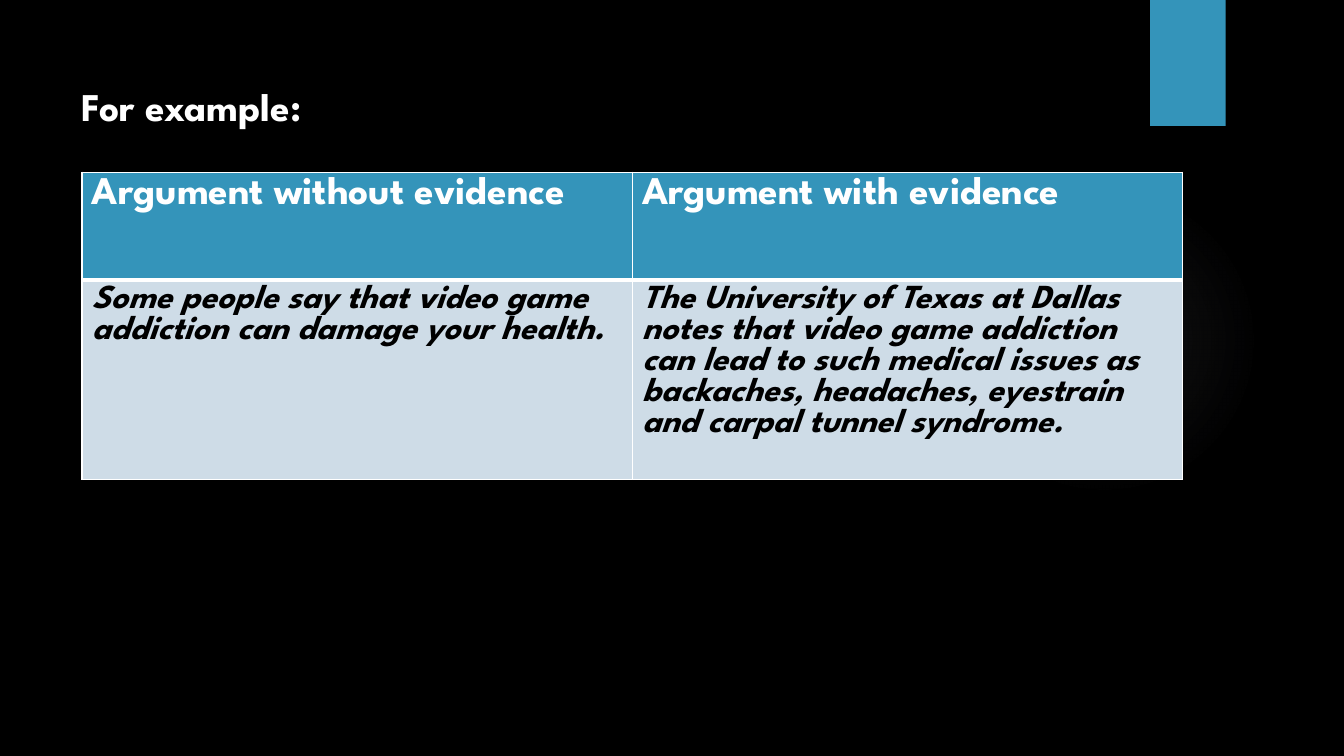
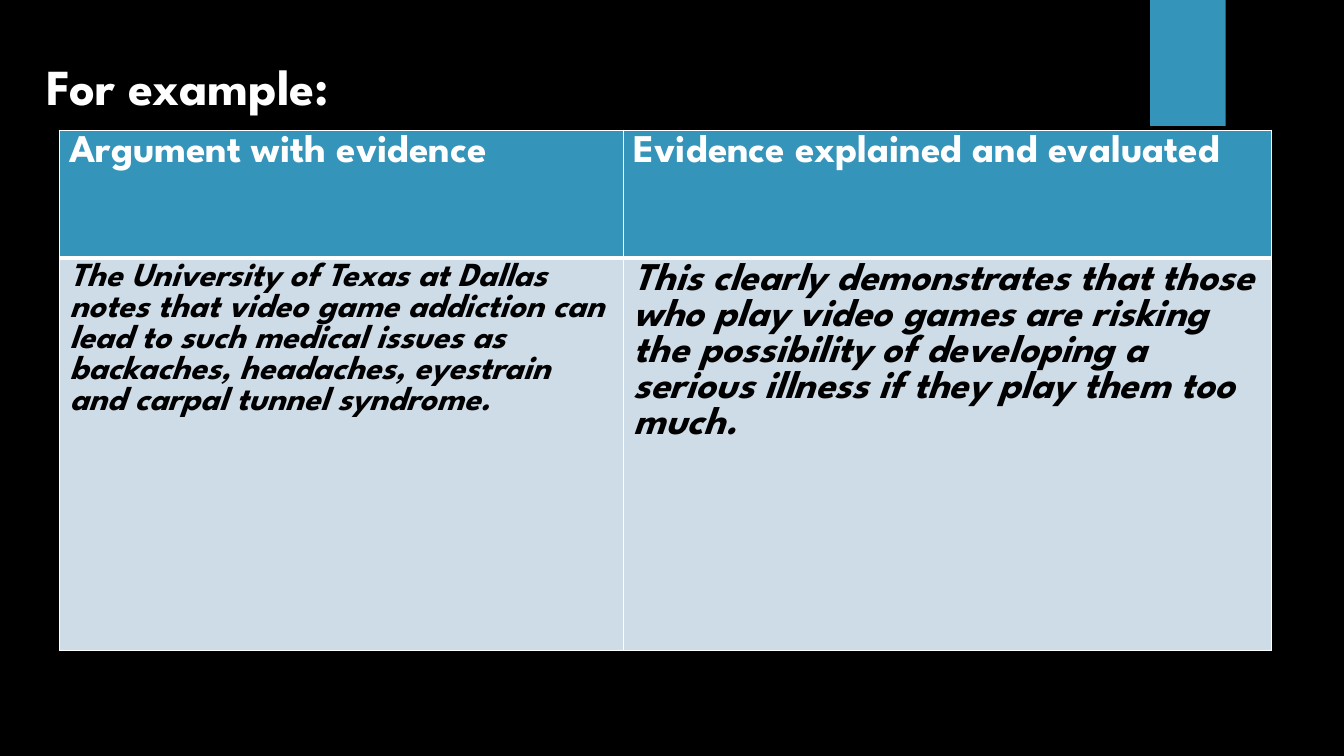
from lxml.etree import SubElement
from pptx import Presentation
from pptx.dml.color import RGBColor
from pptx.enum.shapes import MSO_SHAPE
from pptx.enum.text import MSO_ANCHOR, MSO_AUTO_SIZE, PP_ALIGN
from pptx.oxml import parse_xml
from pptx.oxml.ns import nsdecls, qn
from pptx.util import Pt

FONT = "League Spartan"
BLACK = "000000"
WHITE = "FFFFFF"
BLUE = "3494BA"
PALE = "CEDCE7"
GLOW = "AAA7BC"
GLOW_STOPS = ((0, 7), (36, 6), (69, 0))
THIN, THICK = 1, 3

TITLE = "For example:"
TEXAS_EVIDENCE = (
    "The University of Texas at Dallas notes that video game addiction can lead "
    "to such medical issues as backaches, headaches, eyestrain and carpal tunnel syndrome."
)
EXAMPLES = (
    {
        "title": (51, 55, 28),
        "corner": (58.5, 123),
        "columns": (393, 393),
        "rows": (77, 142.5),
        "headings": ("Argument without evidence", "Argument with evidence"),
        "arguments": (
            ("Some people say that video game addiction can damage your health.", 24),
            (TEXAS_EVIDENCE, 24),
        ),
    },
    {
        "title": (26, 36, 36),
        "corner": (42.5, 93),
        "columns": (403, 463),
        "rows": (91.5, 280),
        "headings": ("Argument with evidence", "Evidence explained and evaluated"),
        "arguments": (
            (TEXAS_EVIDENCE, 24),
            (
                "This clearly demonstrates that those who play video games are risking "
                "the possibility of developing a serious illness if they play them too much.",
                28,
            ),
        ),
    },
)


def paint(fill, colour):
    fill.solid()
    fill.fore_color.rgb = RGBColor.from_string(colour)


def style(paragraph, size, colour, italic=False):
    font = paragraph.font
    font.name = FONT
    font.size = Pt(size)
    font.bold = True
    font.italic = italic
    font.color.rgb = RGBColor.from_string(colour)


def add_plain_shape(slide, preset, left, top, width, height):
    shape = slide.shapes.add_shape(preset, Pt(left), Pt(top), Pt(width), Pt(height))
    shape.shadow.inherit = False
    shape.line.fill.background()
    return shape


def add_glow(slide):
    glow = add_plain_shape(slide, MSO_SHAPE.OVAL, 677.5, 132, 222, 222)
    glow.fill.background()
    stops = "".join(
        f'<a:gs pos="{position * 1000}"><a:srgbClr val="{GLOW}">'
        f'<a:alpha val="{alpha * 1000}"/></a:srgbClr></a:gs>'
        for position, alpha in GLOW_STOPS
    )
    gradient = parse_xml(
        f'<a:gradFill {nsdecls("a")} rotWithShape="1"><a:gsLst>{stops}</a:gsLst>'
        '<a:path path="circle"><a:fillToRect l="50000" t="50000" r="50000" b="50000"/>'
        "</a:path></a:gradFill>"
    )
    properties = glow._element.spPr
    properties.replace(properties.find(qn("a:noFill")), gradient)


def add_backdrop(slide):
    paint(slide.background.fill, BLACK)
    add_glow(slide)
    tab = add_plain_shape(slide, MSO_SHAPE.RECTANGLE, 821.5, 0, 54, 90)
    paint(tab.fill, BLUE)


def set_title(slide, left, top, size):
    title = slide.shapes.title
    title.left, title.top, title.width, title.height = Pt(left), Pt(top), Pt(763), Pt(50)
    frame = title.text_frame
    frame.text = TITLE
    frame.auto_size = MSO_AUTO_SIZE.NONE
    frame.vertical_anchor = MSO_ANCHOR.TOP
    paragraph = frame.paragraphs[0]
    paragraph.alignment = PP_ALIGN.LEFT
    style(paragraph, size, WHITE)


def add_borders(cell, top, bottom):
    properties = cell._tc.get_or_add_tcPr()
    for side, width in (("L", THIN), ("R", THIN), ("T", top), ("B", bottom)):
        border = SubElement(properties, qn(f"a:ln{side}"), w=str(Pt(width)))
        solid = SubElement(border, qn("a:solidFill"))
        SubElement(solid, qn("a:srgbClr"), val=WHITE)


def fill_cell(cell, text, size, is_heading):
    cell.text = text
    style(cell.text_frame.paragraphs[0], size, WHITE if is_heading else BLACK, not is_heading)
    add_borders(cell, *((THIN, THICK) if is_heading else (THICK, THIN)))
    paint(cell.fill, BLUE if is_heading else PALE)


def add_comparison(slide, corner, columns, rows, headings, arguments):
    left, top = corner
    table = slide.shapes.add_table(
        len(rows), len(columns), Pt(left), Pt(top), Pt(sum(columns)), Pt(sum(rows))
    ).table
    table.horz_banding = False
    for column, width in zip(table.columns, columns):
        column.width = Pt(width)
    for row, height in zip(table.rows, rows):
        row.height = Pt(height)
    for index, (heading, (argument, size)) in enumerate(zip(headings, arguments)):
        fill_cell(table.cell(0, index), heading, 28, True)
        fill_cell(table.cell(1, index), argument, size, False)


def main():
    presentation = Presentation()
    presentation.slide_width, presentation.slide_height = Pt(960), Pt(540)
    title_only = presentation.slide_layouts[5]
    for example in EXAMPLES:
        slide = presentation.slides.add_slide(title_only)
        add_backdrop(slide)
        set_title(slide, *example["title"])
        add_comparison(
            slide,
            example["corner"],
            example["columns"],
            example["rows"],
            example["headings"],
            example["arguments"],
        )
    presentation.save("out.pptx")


if __name__ == "__main__":
    main()
